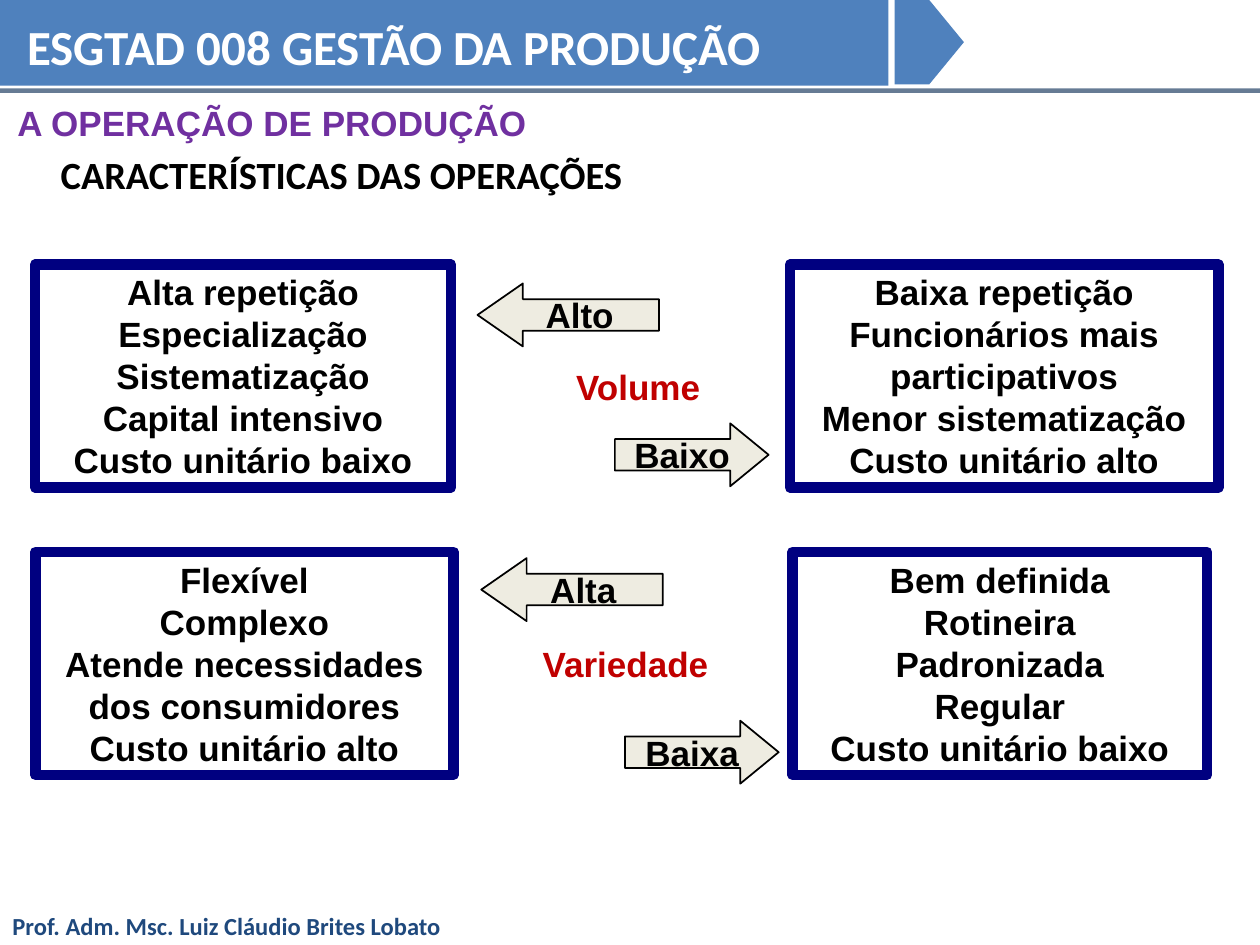
"""Builds the slide on volume and variety in production operations."""
from dataclasses import dataclass

from lxml import etree
from pptx import Presentation, util as u
from pptx.dml.color import RGBColor
from pptx.enum import shapes, text
from pptx.oxml.ns import qn

PX = 9144
SHAPE = shapes.MSO_SHAPE
ALIGN = text.PP_ALIGN
ANCHOR = text.MSO_ANCHOR


@dataclass(frozen=True)
class Theme:
    band: str = "4F81BD"
    rule: str = "17375E"
    author: str = "1F497D"
    white: str = "FFFFFF"
    black: str = "000000"
    section: str = "7030A0"
    border: str = "000080"
    accent: str = "C00000"
    arrow: str = "EEECE1"
    heading: str = "Calibri"
    body: str = "Arial"
    title_pt: int = 28
    subtitle_pt: int = 22
    body_pt: int = 20
    footer_pt: int = 14
    leading_pt: int = 24


class Deck:
    def __init__(self, prs, theme):
        self.t = theme
        self.s = prs.slides.add_slide(prs.slide_layouts[6])

    def fill_text(self, sp, lines, size, color, font, align=ALIGN.LEFT,
                  anchor=ANCHOR.TOP, wrap=True, leading=None):
        tf = sp.text_frame
        tf.word_wrap, tf.vertical_anchor = wrap, anchor
        for i, line in enumerate(lines):
            p = tf.paragraphs[0] if i == 0 else tf.add_paragraph()
            p.alignment = align
            if leading:
                p.line_spacing = u.Pt(leading)
            r = p.add_run()
            r.text = line
            for name, value in {"size": u.Pt(size), "bold": True, "name": font}.items():
                setattr(r.font, name, value)
            r.font.color.rgb = RGBColor.from_string(color)

    def label(self, box, line, size, color, font, align=ALIGN.LEFT):
        sp = self.s.shapes.add_textbox(*(v * PX for v in box))
        self.fill_text(sp, [line], size, color, font, align)

    def shape(self, kind, box, fill=None, line=None, width=1):
        sp = self.s.shapes.add_shape(kind, *(v * PX for v in box))
        sp.shadow.inherit = False
        if fill:
            sp.fill.solid()
            sp.fill.fore_color.rgb = RGBColor.from_string(fill)
        else:
            sp.fill.background()
        if line:
            sp.line.color.rgb = RGBColor.from_string(line)
            sp.line.width = u.Pt(width)
        else:
            sp.line.fill.background()
        return sp

    def panel(self, box, lines):
        t = self.t
        sp = self.shape(SHAPE.RECTANGLE, box, line=t.border, width=6)
        self.fill_text(sp, lines, t.body_pt, t.black, t.body, ALIGN.CENTER,
                       leading=t.leading_pt)

    def arrow(self, kind, box, head, line):
        t = self.t
        sp = self.shape(kind, box, t.arrow, t.black)
        sp.adjustments[1] = head
        self.fill_text(sp, [line], t.body_pt, t.black, t.body, ALIGN.CENTER,
                       ANCHOR.MIDDLE, wrap=False)

    def rule(self, y, width, color, weight, opacity):
        c = self.s.shapes.add_connector(
            shapes.MSO_CONNECTOR.STRAIGHT, 0, y * PX, width * PX, y * PX)
        c.line.color.rgb = RGBColor.from_string(color)
        c.line.width = u.Pt(weight)
        rgb = c._element.spPr.find(".//" + qn("a:srgbClr"))
        etree.SubElement(rgb, qn("a:alpha"), val=str(opacity * 1000))
        etree.SubElement(c._element.spPr, qn("a:effectLst"))


def main():
    prs = Presentation()
    prs.slide_width, prs.slide_height = 1000 * PX, 750 * PX
    t = Theme()
    d = Deck(prs, t)

    d.shape(SHAPE.RECTANGLE, (0, 0, 705, 68), t.band)
    d.rule(72, 1000, t.rule, 2.5, 65)
    d.shape(SHAPE.PENTAGON, (710, 0, 55, 67), t.band)
    d.label((0, 718, 406, 34), "Prof. Adm. Msc. Luiz Cláudio Brites Lobato",
            t.footer_pt, t.author, t.heading)
    d.label((12, 8, 693, 52), "ESGTAD 008 GESTÃO DA PRODUÇÃO",
            t.title_pt, t.white, t.heading)
    d.label((4, 76, 850, 39), "A OPERAÇÃO DE PRODUÇÃO",
            t.body_pt, t.section, t.body)
    d.label((35, 115, 472, 43), "CARACTERÍSTICAS DAS OPERAÇÕES",
            t.subtitle_pt, t.black, t.heading, ALIGN.CENTER)

    panels = [
        ((28, 210, 330, 177), ["Alta repetição", "Especialização", "Sistematização",
                               "Capital intensivo", "Custo unitário baixo"]),
        ((627, 210, 340, 177), ["Baixa repetição", "Funcionários mais participativos",
                                "Menor sistematização", "Custo unitário alto"]),
        ((28, 438, 332, 177), ["Flexível", "Complexo", "Atende necessidades",
                               "dos consumidores", "Custo unitário alto"]),
        ((629, 438, 329, 177), ["Bem definida", "Rotineira", "Padronizada",
                                "Regular", "Custo unitário baixo"]),
    ]
    for box, lines in panels:
        d.panel(box, lines)

    for x, y, line in [(408, 285, "Volume"), (398, 505, "Variedade")]:
        d.label((x, y, 197, 43), line, t.body_pt, t.accent, t.body, ALIGN.CENTER)
    for x, y, line in [(379, 225, "Alto"), (382, 443, "Alta")]:
        d.arrow(SHAPE.LEFT_ARROW, (x, y, 144, 50), 0.72, line)
    for x, y, line in [(488, 336, "Baixo"), (496, 572, "Baixa")]:
        d.arrow(SHAPE.RIGHT_ARROW, (x, y, 122, 50), 0.61, line)

    prs.save("out.pptx")


if __name__ == "__main__":
    main()
